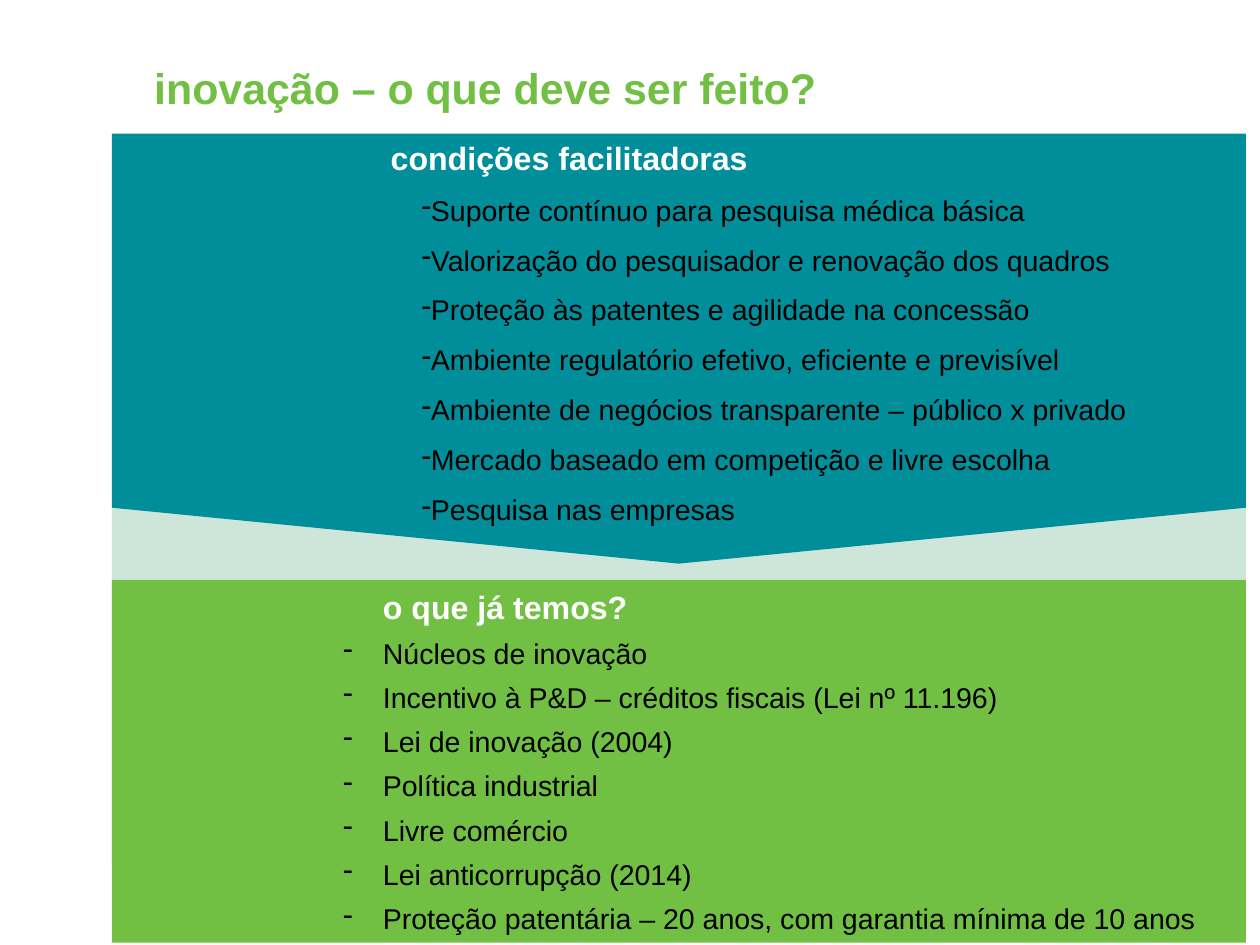
from lxml.etree import SubElement
from pptx import Presentation
from pptx.dml.color import RGBColor
from pptx.enum.shapes import MSO_SHAPE
from pptx.enum.text import MSO_ANCHOR, MSO_AUTO_SIZE, PP_ALIGN
from pptx.oxml.ns import qn
from pptx.util import Inches, Pt

COLORS = {"white": "FFFFFF", "black": "000000", "green": "71BF43",
          "teal": "008F9A", "mint": "CEE6DA"}

TITLE = {"size": Pt(24), "bold": True, "color": "green"}
HEADING = {"size": Pt(18), "bold": True, "color": "white"}
ITEM = {"size": Pt(16), "bold": False, "color": "black"}

CONDITIONS = [
    "Suporte contínuo para pesquisa médica básica",
    "Valorização do pesquisador e renovação dos quadros",
    "Proteção às patentes e agilidade na concessão",
    "Ambiente regulatório efetivo, eficiente e previsível",
    "Ambiente de negócios transparente – público x privado",
    "Mercado baseado em competição e livre escolha",
    "Pesquisa nas empresas",
]
ACHIEVEMENTS = [
    "Núcleos de inovação",
    "Incentivo à P&D – créditos fiscais (Lei nº 11.196)",
    "Lei de inovação (2004)",
    "Política industrial",
    "Livre comércio",
    "Lei anticorrupção (2014)",
    "Proteção patentária – 20 anos, com garantia mínima de 10 anos",
]


class SlideBuilder:
    """Places elements by percentages of the slide's width and height."""

    def __init__(self, deck, font="Arial"):
        self.width, self.height = deck.slide_width, deck.slide_height
        self.font = font
        self.page = deck.slides.add_slide(deck.slide_layouts[5])

    def area(self, left, top, width, height):
        return (round(self.width * left / 100), round(self.height * top / 100),
                round(self.width * width / 100), round(self.height * height / 100))

    def color(self, name):
        return RGBColor.from_string(COLORS[name])

    def add_span(self, para, text, style):
        span = para.add_run()
        span.text = text
        span.font.name = self.font
        for name, value in style.items():
            if name == "color":
                span.font.color.rgb = self.color(value)
            else:
                setattr(span.font, name, value)

    def title(self, text, area):
        box = self.page.shapes.title
        for name, value in zip(("left", "top", "width", "height"), self.area(*area)):
            setattr(box, name, value)
        frame = box.text_frame
        settings = {"word_wrap": False, "auto_size": MSO_AUTO_SIZE.NONE,
                    "vertical_anchor": MSO_ANCHOR.TOP}
        for name, value in settings.items():
            setattr(frame, name, value)
        para = frame.paragraphs[0]
        para.alignment = PP_ALIGN.LEFT
        self.add_span(para, text, TITLE)

    def shape(self, kind, area, fill, turned=False):
        left, top, width, height = self.area(*area)
        if turned:
            left, top = left + (width - height) // 2, top + (height - width) // 2
            width, height = height, width
        box = self.page.shapes.add_shape(kind, left, top, width, height)
        box.rotation = 90 if turned else 0
        box.shadow.inherit = False
        box.fill.solid()
        box.fill.fore_color.rgb = self.color(fill)
        box.line.fill.background()
        return box

    def text_box(self, area):
        return self.page.shapes.add_textbox(*self.area(*area))

    def outline(self, box, heading, items, heading_indent, item_indent, gap):
        """Fills a box with a heading and its dashed items."""
        frame = box.text_frame
        frame.word_wrap = True
        frame.vertical_anchor = MSO_ANCHOR.MIDDLE
        for index, text in enumerate([heading, *items]):
            para = frame.add_paragraph() if index else frame.paragraphs[0]
            margin, hanging = item_indent if index else heading_indent
            properties = para._p.get_or_add_pPr()
            properties.set("marL", str(Inches(margin)))
            properties.set("indent", str(Inches(hanging)))
            if index:
                SubElement(properties, qn("a:buChar")).set("char", "-")
            else:
                SubElement(properties, qn("a:buNone"))
            para.alignment = PP_ALIGN.LEFT
            para.space_before = Pt(gap if index else 0)
            self.add_span(para, text, ITEM if index else HEADING)


def main():
    deck = Presentation()
    deck.slide_width, deck.slide_height = Inches(9.8), Inches(7.35)
    slide = SlideBuilder(deck)
    left, width = 8.88, 90

    slide.title("inovação – o que deve ser feito?", (11.22, 5.85, 55, 6.8))

    # Background panel and the lower panel
    slide.shape(MSO_SHAPE.RECTANGLE, (left, 16.46, width, 75), "mint")
    current = slide.shape(MSO_SHAPE.RECTANGLE, (left, 61.36, width, 38.4), "green")
    slide.outline(current, "o que já temos?", ACHIEVEMENTS,
                  (2.01, 0), (2.01, -0.31), 5.6)

    # Downward arrow with the enabling conditions
    arrow = slide.shape(MSO_SHAPE.PENTAGON, (left, 14.15, width, 45.5), "teal", turned=True)
    arrow.adjustments[0] = 0.13
    conditions = slide.text_box((26.84, 13.2, 65.4, 43.95))
    slide.outline(conditions, "condições facilitadoras", CONDITIONS,
                  (0.31, 0), (0.55, 0), 8.8)

    deck.save("out.pptx")


if __name__ == "__main__":
    main()
